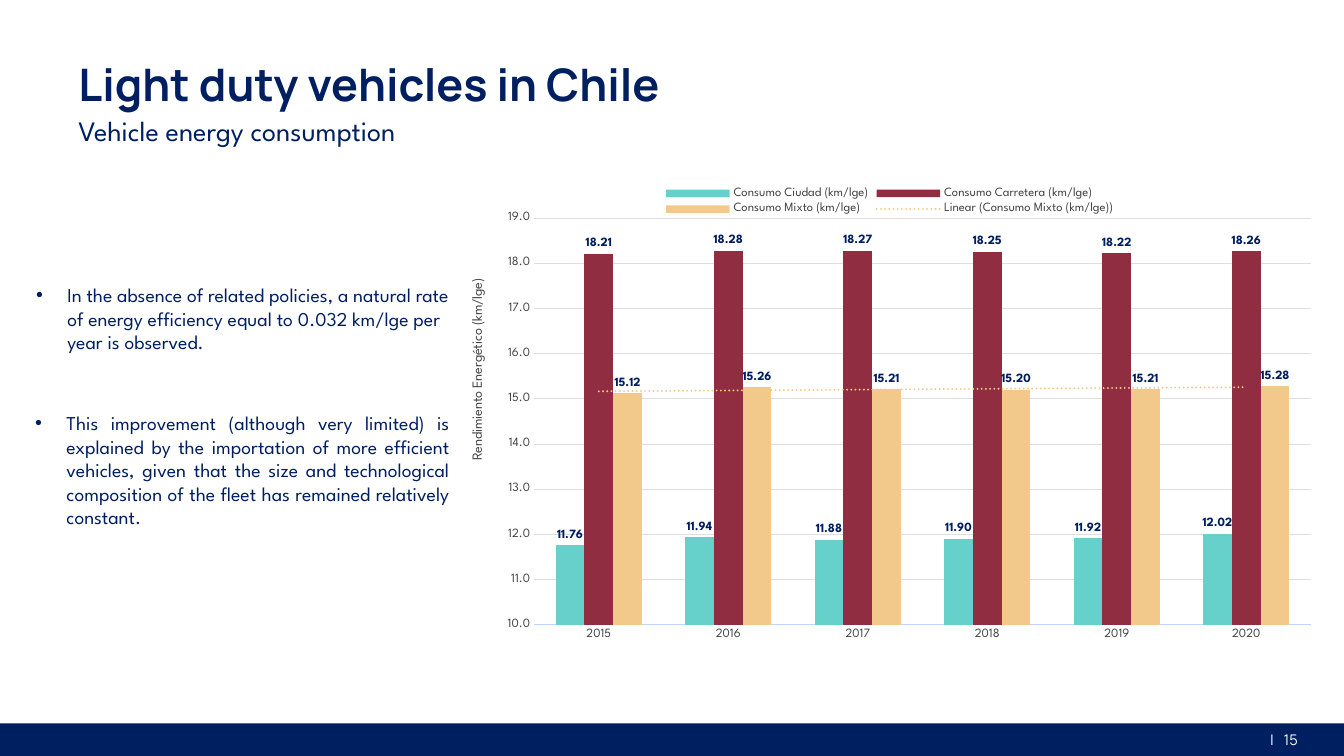
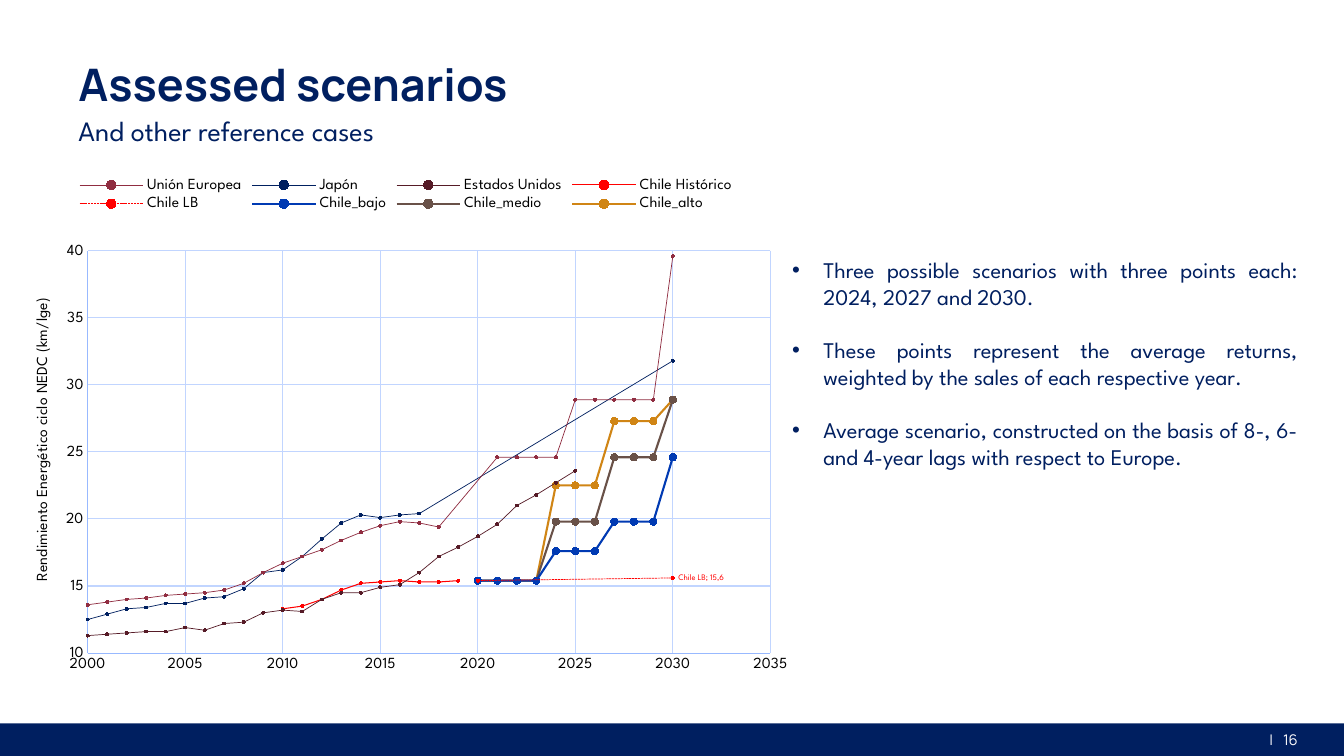
from dataclasses import dataclass

from lxml import etree
from pptx import Presentation
from pptx.chart.data import CategoryChartData, XyChartData
from pptx.chart.datalabel import DataLabels
from pptx.dml.color import RGBColor
from pptx.enum.chart import (XL_CHART_TYPE, XL_LABEL_POSITION, XL_LEGEND_POSITION,
                             XL_MARKER_STYLE, XL_TICK_MARK)
from pptx.enum.dml import MSO_LINE
from pptx.enum.shapes import MSO_SHAPE
from pptx.enum.text import MSO_ANCHOR, PP_ALIGN
from pptx.oxml import parse_xml
from pptx.oxml.ns import nsdecls, qn
from pptx.util import Inches, Pt

COLUMNS, SCATTER = XL_CHART_TYPE.COLUMN_CLUSTERED, XL_CHART_TYPE.XY_SCATTER_LINES
LEGEND_TOP, NO_TICK = XL_LEGEND_POSITION.TOP, XL_TICK_MARK.NONE
OUTSIDE, BESIDE = XL_LABEL_POSITION.OUTSIDE_END, XL_LABEL_POSITION.RIGHT
CIRCLE, DASHED = XL_MARKER_STYLE.CIRCLE, MSO_LINE.SQUARE_DOT
RECTANGLE = MSO_SHAPE.RECTANGLE
LEFT, RIGHT, JUSTIFY = PP_ALIGN.LEFT, PP_ALIGN.RIGHT, PP_ALIGN.JUSTIFY
TOP, MIDDLE, BOTTOM = MSO_ANCHOR.TOP, MSO_ANCHOR.MIDDLE, MSO_ANCHOR.BOTTOM


@dataclass(frozen=True)
class Theme:
    head_font: str = "Manrope"
    body_font: str = "League Spartan"
    navy: str = "001F60"
    white: str = "FFFFFF"
    black: str = "000000"
    grey: str = "434343"
    grid_grey: str = "DEDEDE"
    grid_blue: str = "C1D5FF"
    axis_blue: str = "98B9FF"
    teal: str = "66D1CA"
    wine: str = "902D41"
    sand: str = "F3C98B"
    ink: str = "002060"
    plum: str = "561B27"
    red: str = "FF0000"
    blue: str = "003AB3"
    brown: str = "695148"
    ochre: str = "D08515"
    title: float = 32
    subtitle: float = 20
    number: float = 10.5


THEME = Theme()


@dataclass(frozen=True)
class Box:
    left: float
    top: float
    width: float
    height: float

    def share(self, left, top, width, height):
        """A box inside this one, in percent of its width and height."""
        return Box(self.left + self.width * left / 100, self.top + self.height * top / 100,
                   self.width * width / 100, self.height * height / 100)

    def lengths(self):
        return [Inches(n) for n in (self.left, self.top, self.width, self.height)]


SLIDE = Box(0, 0, 13.33, 7.5)


def color(code):
    return RGBColor.from_string(code)


def style(font, size, code, face=THEME.body_font, bold=False):
    font.size, font.name, font.bold = Pt(size), face, bold
    font.color.rgb = color(code)


def add_text(page, box, anchor):
    frame = page.shapes.add_textbox(*box.lengths()).text_frame
    frame.word_wrap, frame.vertical_anchor = True, anchor
    return frame


def add_span(para, text, *look, **extra):
    span = para.add_run()
    span.text = text
    style(span.font, *look, **extra)
    return span


# Shared slide parts

def heading(page, box, title, subtitle):
    para = add_text(page, box.share(0, 0, 100, 75.2), BOTTOM).paragraphs[0]
    para.line_spacing = 0.9
    add_span(para, title, THEME.title, THEME.navy, THEME.head_font, True)
    para = add_text(page, box.share(0, 75.2, 100, 24.8), MIDDLE).paragraphs[0]
    para.line_spacing = 0.9
    add_span(para, subtitle, THEME.subtitle, THEME.navy)


def footer(page, box, number):
    band = page.shapes.add_shape(RECTANGLE, *box.lengths())
    band.shadow.inherit = False
    band.fill.solid()
    band.fill.fore_color.rgb = color(THEME.navy)
    band.line.fill.background()
    para = add_text(page, box.share(91.35, 0, 5.95, 100), MIDDLE).paragraphs[0]
    para.alignment = RIGHT
    look = (THEME.number, THEME.white, THEME.head_font)
    add_span(para, "|", *look)
    gap = add_span(para, " ", *look)
    gap.font._element.set("spc", "500")
    add_span(para, str(number), *look)


def bullets(page, box, items, size, align=JUSTIFY, gap=0):
    frame = add_text(page, box, TOP)
    for index, item in enumerate(items):
        para = frame.add_paragraph() if index else frame.paragraphs[0]
        props = para._p.get_or_add_pPr()
        props.set("marL", str(Inches(0.31)))
        props.set("indent", str(-Inches(0.31)))
        etree.SubElement(props, qn("a:buFont")).set("typeface", "Arial")
        etree.SubElement(props, qn("a:buChar")).set("char", "•")
        para.alignment = align
        if index:
            para.space_before = Pt(gap)
        add_span(para, item, size, THEME.navy)


def base_page(deck, number, title, subtitle):
    page = deck.slides.add_slide(deck.slide_layouts[6])
    footer(page, SLIDE.share(0, 95.7, 100, 4.3), number)
    heading(page, SLIDE.share(5.1, 2.4, 77.7, 17.2), title, subtitle)
    return page


# Chart parts

def place(parent, index, left, top, width=None, height=None):
    """Fix a chart part by shares of the chart's size."""
    for old in parent.findall(qn("c:layout")):
        parent.remove(old)
    inner = '<c:layoutTarget val="inner"/>' if width else ""
    sizes = f'<c:w val="{width}"/><c:h val="{height}"/>' if width else ""
    parent.insert(index, parse_xml(
        f'<c:layout {nsdecls("c")}><c:manualLayout>{inner}<c:xMode val="edge"/>'
        f'<c:yMode val="edge"/><c:x val="{left}"/><c:y val="{top}"/>{sizes}'
        f'</c:manualLayout></c:layout>'))


def add_chart(page, box, kind, data, size, ink, plot_area):
    chart = page.shapes.add_chart(kind, *box.lengths(), data).chart
    chart.has_title = False
    style(chart.font, size, ink)
    chart.has_legend = True
    chart.legend.position = LEGEND_TOP
    chart.legend.include_in_layout = False
    style(chart.legend.font, size, ink)
    chart.plots[0].vary_by_categories = False
    place(chart._chartSpace.chart.plotArea, 0, *plot_area)
    return chart


def axis_look(axis, size, ink, line, grid=None):
    axis.major_tick_mark = axis.minor_tick_mark = NO_TICK
    style(axis.tick_labels.font, size, ink)
    axis.has_major_gridlines = grid is not None
    edges = [(axis.format.line, line)]
    if grid:
        edges.append((axis.major_gridlines.format.line, grid))
    for edge, code in edges:
        if code:
            edge.color.rgb, edge.width = color(code), Pt(0.75)
        else:
            edge.fill.background()


def axis_scale(axis, low, high, step, pattern):
    axis.minimum_scale, axis.maximum_scale, axis.major_unit = low, high, step
    axis.tick_labels.number_format = pattern
    axis.tick_labels.number_format_is_linked = False


def axis_name(axis, text, size, ink, left, top):
    frame = axis.axis_title.text_frame
    add_span(frame.paragraphs[0], text, size, ink)
    turn = frame._txBody.find(qn("a:bodyPr"))
    turn.set("rot", "-5400000")
    turn.set("vert", "horz")
    place(axis.axis_title._element, 1, left, top)


def add_trend(series, code):
    series._element.find(qn("c:cat")).addprevious(parse_xml(
        f'<c:trendline {nsdecls("c", "a")}><c:name>Linear ({series.name})</c:name>'
        f'<c:spPr><a:ln w="{Pt(1.5)}" cap="rnd"><a:solidFill><a:srgbClr val="{code}"/>'
        f'</a:solidFill><a:prstDash val="sysDot"/></a:ln></c:spPr>'
        f'<c:trendlineType val="linear"/><c:dispRSqr val="0"/><c:dispEq val="0"/>'
        f'</c:trendline>'))


def consumption_chart(page, box):
    rows = [
        ("Consumo Ciudad (km/lge)", THEME.teal, [11.76, 11.94, 11.88, 11.90, 11.92, 12.02]),
        ("Consumo Carretera (km/lge)", THEME.wine, [18.21, 18.28, 18.27, 18.25, 18.22, 18.26]),
        ("Consumo Mixto (km/lge)", THEME.sand, [15.12, 15.26, 15.21, 15.20, 15.21, 15.28]),
    ]
    data = CategoryChartData()
    data.categories = [str(year) for year in range(2015, 2021)]
    for name, _, values in rows:
        data.add_series(name, values)
    chart = add_chart(page, box, COLUMNS, data, 9, THEME.grey, (0.095, 0.088, 0.885, 0.859))
    chart.plots[0].gap_width, chart.plots[0].overlap = 150, 0
    axis_look(chart.category_axis, 9, THEME.grey, THEME.grid_blue)
    axis_look(chart.value_axis, 9, THEME.grey, None, THEME.grid_grey)
    axis_scale(chart.value_axis, 10, 19, 1, "#,##0.0")
    axis_name(chart.value_axis, "Rendimiento Energético (km/lge)", 10, THEME.grey, 0.02, 0.21)
    for series, (_, code, _) in zip(chart.plots[0].series, rows):
        series.format.fill.solid()
        series.format.fill.fore_color.rgb = color(code)
        labels = series.data_labels
        labels.show_value, labels.position = True, OUTSIDE
        labels.number_format, labels.number_format_is_linked = "0.00", False
        style(labels.font, 9, THEME.navy, bold=True)
    add_trend(series, THEME.sand)


def scenario_chart(page, box):
    ahead = list(range(2020, 2031))
    start = [15.4] * 4

    def steps(first, second, last):
        return start + [first] * 3 + [second] * 3 + [last]

    # name, colour, line width, marker size, years, values
    rows = [
        ("Unión Europea", THEME.wine, 0.5, 2, [*range(2000, 2019), *range(2021, 2031)],
         [13.6, 13.8, 14, 14.1, 14.3, 14.4, 14.5, 14.7, 15.2, 16, 16.7, 17.2, 17.7, 18.4, 19,
          19.5, 19.8, 19.7, 19.4] + [24.6] * 4 + [28.9] * 5 + [39.6]),
        ("Japón", THEME.ink, 0.5, 2, [*range(2000, 2018), 2030],
         [12.5, 12.9, 13.3, 13.4, 13.7, 13.7, 14.1, 14.2, 14.8, 16, 16.2, 17.2, 18.5, 19.7,
          20.3, 20.1, 20.3, 20.4, 31.8]),
        ("Estados Unidos", THEME.plum, 0.5, 2, range(2000, 2026),
         [11.3, 11.4, 11.5, 11.6, 11.6, 11.9, 11.7, 12.2, 12.3, 13, 13.2, 13.1, 14, 14.5, 14.5,
          14.9, 15.1, 16, 17.2, 17.9, 18.7, 19.6, 21, 21.8, 22.7, 23.6]),
        ("Chile Histórico", THEME.red, 0.75, 2, range(2010, 2020),
         [13.3, 13.5, 14, 14.7, 15.2, 15.3, 15.4, 15.3, 15.3, 15.4]),
        ("Chile LB", THEME.red, 0.5, 2, [2020, 2030], [15.4, 15.6]),
        ("Chile_bajo", THEME.blue, 1.5, 5, ahead, steps(17.6, 19.8, 24.6)),
        ("Chile_medio", THEME.brown, 1.5, 5, ahead, steps(19.8, 24.6, 28.9)),
        ("Chile_alto", THEME.ochre, 1.5, 5, ahead, steps(22.5, 27.3, 28.9)),
    ]
    data = XyChartData()
    for name, _, _, _, years, values in rows:
        points = data.add_series(name)
        for year, value in zip(years, values):
            points.add_data_point(year, value)
    chart = add_chart(page, box, SCATTER, data, 11, THEME.black, (0.097, 0.161, 0.865, 0.766))
    for axis in (chart.category_axis, chart.value_axis):
        axis_look(axis, 11, THEME.black, THEME.axis_blue, THEME.grid_blue)
    axis_scale(chart.category_axis, 2000, 2035, 5, "General")
    axis_scale(chart.value_axis, 10, 40, 5, "#,##0")
    axis_name(chart.value_axis, "Rendimiento Energético ciclo NEDC (km/lge)", 11,
              THEME.black, 0.025, 0.245)
    for series, (name, code, width, size, _, _) in zip(chart.plots[0].series, rows):
        series.format.line.color.rgb = color(code)
        series.format.line.width = Pt(width)
        marker = series.marker
        marker.style, marker.size = CIRCLE, size
        marker.format.fill.solid()
        marker.format.fill.fore_color.rgb = color(code)
        marker.format.line.color.rgb = color(code)
        if name == "Chile LB":
            series.format.line.dash_style = DASHED
            DataLabels(series._element.get_or_add_dLbls()).show_value = False
            label = series.points[1].data_label
            add_span(label.text_frame.paragraphs[0], "Chile LB; 15,6", 6, code)
            label.position = BESIDE


# Slides

def consumption_slide(deck):
    page = base_page(deck, 15, "Light duty vehicles in Chile", "Vehicle energy consumption")
    consumption_chart(page, SLIDE.share(33.53, 23.33, 65.33, 62.67))
    bullets(page, SLIDE.share(1.95, 36.8, 32.33, 10.8), [
        "In the absence of related policies, a natural rate of energy efficiency equal to "
        "0.032 km/lge per year is observed."], 14, LEFT)
    bullets(page, SLIDE.share(1.88, 53.73, 32.33, 20.13), [
        "This improvement (although very limited) is explained by the importation of more "
        "efficient vehicles, given that the size and technological composition of the fleet "
        "has remained relatively constant."], 14)


def scenario_slide(deck):
    page = base_page(deck, 16, "Assessed scenarios", "And other reference cases")
    scenario_chart(page, SLIDE.share(0.83, 22, 58.73, 69.47))
    bullets(page, SLIDE.share(58.2, 33.2, 39.1, 37.2), [
        "Three possible scenarios with three points each: 2024, 2027 and 2030.",
        "These points represent the average returns, weighted by the sales of each "
        "respective year.",
        "Average scenario, constructed on the basis of 8-, 6- and 4-year lags with respect "
        "to Europe."], 16, gap=19)


def main():
    deck = Presentation()
    deck.slide_width, deck.slide_height = Inches(SLIDE.width), Inches(SLIDE.height)
    consumption_slide(deck)
    scenario_slide(deck)
    deck.save("out.pptx")


if __name__ == "__main__":
    main()
